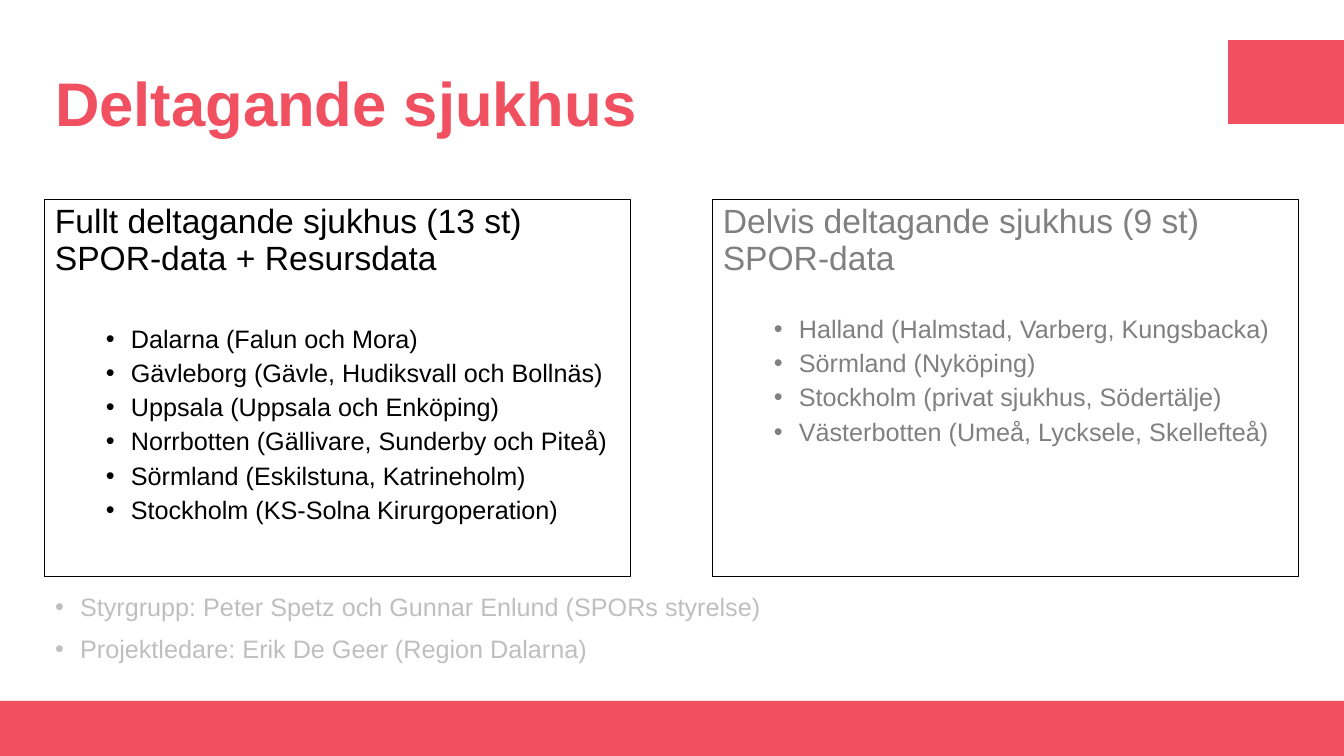
from dataclasses import dataclass

from lxml import etree
from pptx import Presentation
from pptx import util as u
from pptx.dml.color import RGBColor
from pptx.enum import shapes, text
from pptx.oxml.ns import qn

SLIDE_W, SLIDE_H = 1344, 756
SCALE = u.Inches(7.5) / SLIDE_H


@dataclass(frozen=True)
class Theme:
    face: str = "Arial"
    accent: str = "F15060"
    ink: str = "000000"
    muted: str = "808080"
    faint: str = "BFBFBF"
    title_size: int = 44
    heading_size: int = 24
    list_size: int = 18


THEME = Theme()


def px(length):
    return u.Emu(round(length * SCALE))


def place(part, box):
    part.left, part.top, part.width, part.height = map(px, box)


def format_text(paragraph, size, color, before=0, bold=False):
    paragraph.alignment = text.PP_ALIGN.LEFT
    paragraph.line_spacing = 0.9
    paragraph.space_before = u.Pt(before)
    for run in paragraph.runs:
        run.font.name = THEME.face
        run.font.size = u.Pt(size)
        run.font.bold = bold
        run.font.color.rgb = RGBColor.from_string(color)


def add_bullet(paragraph, margin, hanging=25):
    properties = paragraph._p.get_or_add_pPr()
    properties.set("marL", str(px(margin)))
    properties.set("indent", str(-px(hanging)))
    etree.SubElement(properties, qn("a:buFont")).set("typeface", THEME.face)
    etree.SubElement(properties, qn("a:buChar")).set("char", "•")


def add_rectangle(slide, box, fill=None, line=None):
    rectangle = slide.shapes.add_shape(shapes.MSO_SHAPE.RECTANGLE, *map(px, box))
    rectangle.shadow.inherit = False
    if fill:
        rectangle.fill.solid()
        rectangle.fill.fore_color.rgb = RGBColor.from_string(fill)
    else:
        rectangle.fill.background()
    if line:
        rectangle.line.color.rgb = RGBColor.from_string(line)
        rectangle.line.width = u.Pt(0.75)
    else:
        rectangle.line.fill.background()
    return rectangle


def add_title(slide, box, wording):
    title = slide.shapes.title
    place(title, box)
    frame = title.text_frame
    frame.text = wording
    frame.vertical_anchor = text.MSO_ANCHOR.MIDDLE
    format_text(frame.paragraphs[0], THEME.title_size, THEME.accent, bold=True)


def add_contacts(slide, box, contacts):
    body = slide.placeholders[1]
    place(body, box)
    frame = body.text_frame
    frame.text = "\n".join(contacts)
    frame.auto_size = text.MSO_AUTO_SIZE.NONE
    for index, paragraph in enumerate(frame.paragraphs):
        add_bullet(paragraph, margin=25)
        format_text(paragraph, THEME.list_size, THEME.faint, before=10 if index else 0)


def add_hospital_panel(slide, box, heading, regions, color, list_gap):
    frame = add_rectangle(slide, box, line=THEME.ink).text_frame
    frame.word_wrap = True
    frame.vertical_anchor = text.MSO_ANCHOR.TOP
    # Heading
    title = frame.paragraphs[0]
    title.text = heading
    format_text(title, THEME.heading_size, color)
    # Regions with their hospitals
    for index, region in enumerate(regions):
        entry = frame.add_paragraph()
        entry.text = region
        entry.level = 1
        add_bullet(entry, margin=76)
        format_text(entry, THEME.list_size, color, before=5 if index else list_gap)


def add_hospitals_slide(deck):
    slide = deck.slides.add_slide(deck.slide_layouts[1])
    margin, panel_w, panel_top, panel_h = 45, 586, 200, 377
    content_w = SLIDE_W - 2 * margin

    # Red band and corner block
    add_rectangle(slide, (0, 701, SLIDE_W, SLIDE_H - 701), fill=THEME.accent)
    add_rectangle(slide, (1228, 40, SLIDE_W - 1228, 84), fill=THEME.accent)

    add_title(slide, (margin, 40, 1170, 133), "Deltagande sjukhus")
    add_contacts(slide, (margin, 590, content_w, 91), [
        "Styrgrupp: Peter Spetz och Gunnar Enlund (SPORs styrelse)",
        "Projektledare: Erik De Geer (Region Dalarna)",
    ])

    # Full and partial participants
    panels = [
        ("Fullt deltagande sjukhus (13 st)\vSPOR-data + Resursdata", [
            "Dalarna (Falun och Mora)",
            "Gävleborg (Gävle, Hudiksvall och Bollnäs)",
            "Uppsala (Uppsala och Enköping)",
            "Norrbotten (Gällivare, Sunderby och Piteå)",
            "Sörmland (Eskilstuna, Katrineholm)",
            "Stockholm (KS-Solna Kirurgoperation)",
        ], THEME.ink, 35),
        ("Delvis deltagande sjukhus (9 st)\vSPOR-data", [
            "Halland (Halmstad, Varberg, Kungsbacka)",
            "Sörmland (Nyköping)",
            "Stockholm (privat sjukhus, Södertälje)",
            "Västerbotten (Umeå, Lycksele, Skellefteå)",
        ], THEME.muted, 28),
    ]
    for index, (heading, regions, color, list_gap) in enumerate(panels):
        left = margin + index * (content_w - panel_w)
        add_hospital_panel(slide, (left, panel_top, panel_w, panel_h),
                           heading, regions, color, list_gap)


def main():
    deck = Presentation()
    deck.slide_width, deck.slide_height = px(SLIDE_W), px(SLIDE_H)
    add_hospitals_slide(deck)
    deck.save("out.pptx")


if __name__ == "__main__":
    main()
